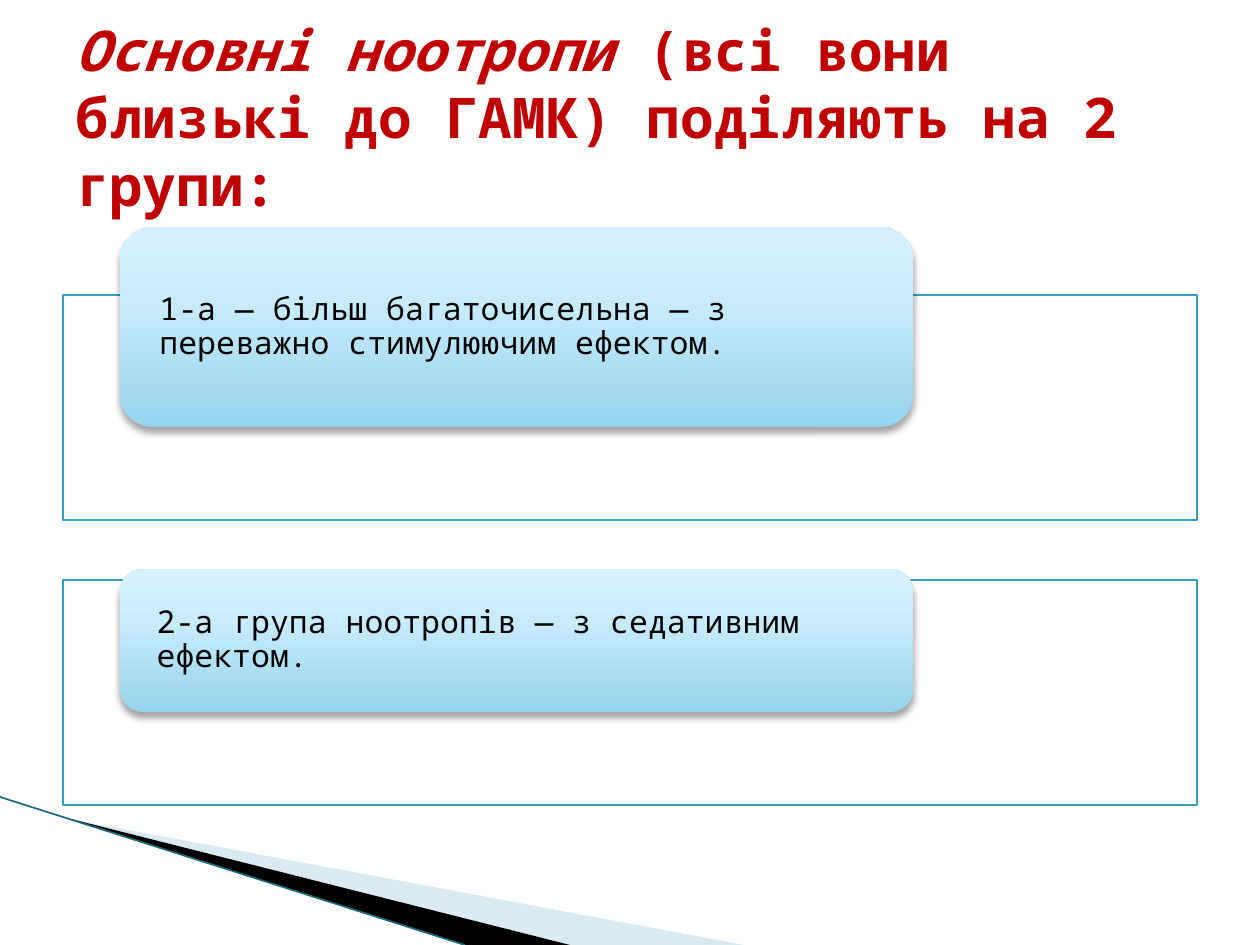
import pptx
import pptx.dml.color
import pptx.enum.shapes
import pptx.enum.text
import pptx.oxml
import pptx.oxml.ns
import pptx.util

PX = 914400 / 126
FONT = "Noto Sans Mono"
NAMESPACE = pptx.oxml.ns.nsdecls("a")
GRADIENT = [(0, "96D4EE"), (65, "C9ECFC"), (100, "D7F2FF")]


def px(value):
    return pptx.util.Emu(round(value * PX))


def color(hex_string):
    return pptx.dml.color.RGBColor.from_string(hex_string)


def set_alpha(fill, percent):
    fill.fore_color._xFill[0].append(
        pptx.oxml.parse_xml(f'<a:alpha {NAMESPACE} val="{percent * 1000}"/>'))


def set_font(run, size, hex_string, bold=False, italic=False):
    font = run.font
    font.name, font.size = FONT, pptx.util.Pt(size)
    font.bold, font.italic = bold, italic
    font.color.rgb = color(hex_string)


def add_wedge(slide, points, hex_string, alpha=100):
    builder = slide.shapes.build_freeform(*points[0], scale=PX)
    builder.add_line_segments(points[1:], close=True)
    wedge = builder.convert_to_shape()
    wedge.shadow.inherit = False
    wedge.fill.solid()
    wedge.fill.fore_color.rgb = color(hex_string)
    set_alpha(wedge.fill, alpha)
    wedge.line.fill.background()


def add_corner(slide, left, top):
    """Decorative wedges running from the left edge to the slide bottom."""
    def place(points):
        return [(left + x, top + y) for x, y in points]

    add_wedge(slide, place([(69, 22), (744, 148), (570, 148)]), "A0CBDC", 40)
    add_wedge(slide, place([(67, 21), (570, 148), (463, 148)]), "000000")
    edge = slide.shapes.add_connector(
        pptx.enum.shapes.MSO_CONNECTOR.STRAIGHT,
        px(left), px(top), px(left + 465), px(top + 148))
    edge.line.color.rgb = color("196A7D")
    edge.line.width = pptx.util.Pt(0.95)
    edge._element.spPr.append(pptx.oxml.parse_xml(f"<a:effectLst {NAMESPACE}/>"))


def style_label(label):
    # Three-stop gradient, rising from the bottom
    label.fill.gradient()
    label.fill.gradient_angle = 90
    stops = label._element.spPr.find(".//" + pptx.oxml.ns.qn("a:gsLst"))
    for stop in list(stops):
        stops.remove(stop)
    for position, hex_string in GRADIENT:
        stops.append(pptx.oxml.parse_xml(
            f'<a:gs {NAMESPACE} pos="{position * 1000}">'
            f'<a:srgbClr val="{hex_string}"/></a:gs>'))
    label.line.fill.background()
    # Soft shadow below
    label.shadow.inherit = False
    effects = label._element.spPr.find(pptx.oxml.ns.qn("a:effectLst"))
    effects.append(pptx.oxml.parse_xml(
        f'<a:outerShdw {NAMESPACE} blurRad="50800" dist="38100" dir="5400000" '
        'rotWithShape="0"><a:srgbClr val="000000"><a:alpha val="35000"/>'
        '</a:srgbClr></a:outerShdw>'))


def add_group_panel(slide, left, top, width, height, label_rise, label_height, text):
    """Outlined panel with a rounded label overlapping its top edge."""
    shapes = slide.shapes
    kinds = pptx.enum.shapes.MSO_SHAPE
    panel = shapes.add_shape(kinds.RECTANGLE, px(left), px(top), px(width), px(height))
    panel.shadow.inherit = False
    panel.fill.solid()
    panel.fill.fore_color.rgb = color("FFFFFF")
    set_alpha(panel.fill, 90)
    panel.line.color.rgb = color("2DA2BF")
    panel.line.width = pptx.util.Pt(0.75)

    label = shapes.add_shape(
        kinds.ROUNDED_RECTANGLE, px(left + width * 0.05), px(top - label_rise),
        px(width * 0.7), px(label_height))
    style_label(label)
    frame = label.text_frame
    frame.word_wrap = True
    frame.vertical_anchor = pptx.enum.text.MSO_ANCHOR.MIDDLE
    frame.margin_left = frame.margin_right = px(30)
    frame.margin_top = frame.margin_bottom = 0
    frame.text = text
    paragraph = frame.paragraphs[0]
    paragraph.alignment = pptx.enum.text.PP_ALIGN.LEFT
    paragraph.line_spacing = 0.9
    set_font(paragraph.runs[0], 18, "000000")


def add_title(slide, left, top, width, height):
    title = slide.shapes.title
    title.left, title.top = px(left), px(top)
    title.width, title.height = px(width), px(height)
    frame = title.text_frame
    frame.word_wrap = True
    frame.auto_size = pptx.enum.text.MSO_AUTO_SIZE.NONE
    frame.vertical_anchor = pptx.enum.text.MSO_ANCHOR.MIDDLE
    paragraph = frame.paragraphs[0]
    paragraph.alignment = pptx.enum.text.PP_ALIGN.LEFT
    for text, italic in [
        ("Основні ноотропи ", True),
        ("(всі вони близькі до ГАМК) поділяють на 2 групи:", False),
    ]:
        run = paragraph.add_run()
        run.text = text
        set_font(run, 32, "C00000", bold=True, italic=italic)


def main():
    presentation = pptx.Presentation()
    presentation.slide_width, presentation.slide_height = px(1260), px(945)
    slide = presentation.slides.add_slide(presentation.slide_layouts[5])

    add_corner(slide, 0, 797)
    panels = [
        (68, 200, "1-а — більш багаточисельна — з переважно стимулюючим ефектом."),
        (11, 143, "2-а група ноотропів — з седативним ефектом."),
    ]
    for index, (label_rise, label_height, text) in enumerate(panels):
        add_group_panel(slide, 63, 295 + index * 285, 1134, 225,
                        label_rise, label_height, text)
    add_title(slide, 63, 38, 1134, 157)

    presentation.save("out.pptx")


if __name__ == "__main__":
    main()
